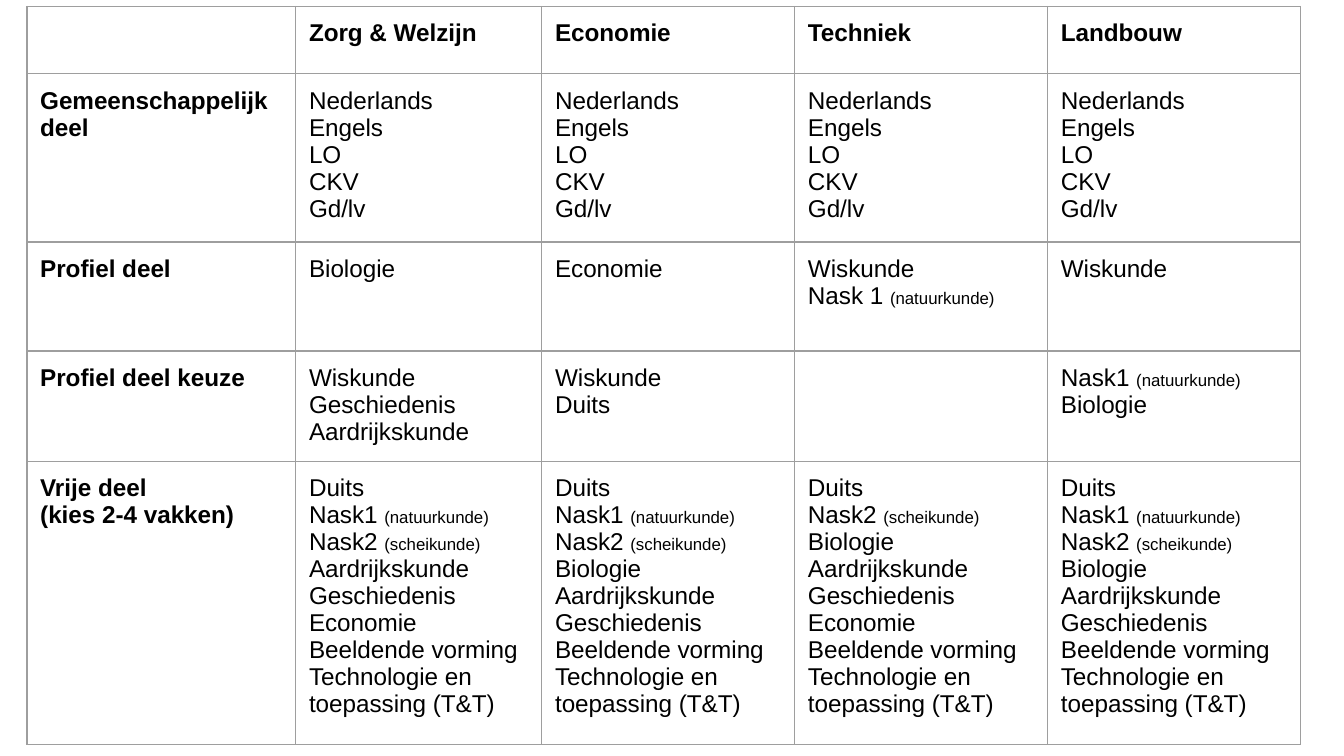
from lxml.etree import SubElement
from pptx import Presentation
from pptx.dml.color import RGBColor
from pptx.oxml.ns import qn
from pptx.util import Cm, Pt

BLACK = RGBColor(0x00, 0x00, 0x00)
WHITE = RGBColor(0xFF, 0xFF, 0xFF)
GREY = RGBColor(0x9E, 0x9E, 0x9E)
FONT = "Arial"

COL_WIDTHS = [5.08, 4.65, 4.78, 4.78, 4.78]
ROW_HEIGHTS = [1.14, 3.18, 2.06, 2.08, 5.36]
INSET = Cm(0.25)

# A cell is a list of paragraphs; a tuple alternates normal and small runs
PHYSICS = ("Nask1 ", "(natuurkunde)")
CHEMISTRY = ("Nask2 ", "(scheikunde)")
COMMON = ["Nederlands", "Engels", "LO", "CKV", "Gd/lv"]
CREATIVE = ["Beeldende vorming", "Technologie en toepassing (T&T)"]
FREE_WITH_BIOLOGY = ["Duits", PHYSICS, CHEMISTRY, "Biologie",
                     "Aardrijkskunde", "Geschiedenis"] + CREATIVE

ROWS = [
    [[], ["Zorg & Welzijn"], ["Economie"], ["Techniek"], ["Landbouw"]],
    [["Gemeenschappelijk deel"]] + [COMMON] * 4,
    [["Profiel deel"], ["Biologie"], ["Economie"],
     ["Wiskunde", ("Nask 1 ", "(natuurkunde)")], ["Wiskunde"]],
    [["Profiel deel keuze"],
     ["Wiskunde", "Geschiedenis", "Aardrijkskunde"],
     ["Wiskunde", "Duits"],
     [],
     [("Nask1 ", "(natuurkunde) ", "Biologie")]],
    [["Vrije deel", "(kies 2-4 vakken)"],
     ["Duits", PHYSICS, CHEMISTRY, "Aardrijkskunde", "Geschiedenis",
      "Economie"] + CREATIVE,
     FREE_WITH_BIOLOGY,
     ["Duits", CHEMISTRY, "Biologie", "Aardrijkskunde", "Geschiedenis",
      "Economie"] + CREATIVE,
     FREE_WITH_BIOLOGY],
]


def set_borders(cell):
    tc_pr = cell._tc.get_or_add_tcPr()
    for side in ("a:lnL", "a:lnR", "a:lnT", "a:lnB"):
        ln = SubElement(tc_pr, qn(side), w=str(Pt(0.75)))
        fill = SubElement(ln, qn("a:solidFill"))
        SubElement(fill, qn("a:srgbClr"), val=str(GREY))


def add_run(p, text, size, bold):
    r = p.add_run()
    r.text = text
    r.font.name = FONT
    r.font.size = Pt(size)
    r.font.bold = bold
    r.font.color.rgb = BLACK


def fill_cell(cell, paragraphs, bold):
    cell.margin_left = cell.margin_right = INSET
    cell.margin_top = cell.margin_bottom = INSET
    set_borders(cell)
    cell.fill.solid()
    cell.fill.fore_color.rgb = WHITE
    tf = cell.text_frame
    for i, content in enumerate(paragraphs):
        p = tf.add_paragraph() if i else tf.paragraphs[0]
        runs = (content,) if isinstance(content, str) else content
        for j, text in enumerate(runs):
            add_run(p, text, 9 if j % 2 else 13, bold)


def add_subject_table(s):
    frame = s.shapes.add_table(len(ROWS), len(COL_WIDTHS), Cm(0.51), Cm(0.12),
                               Cm(sum(COL_WIDTHS)), Cm(sum(ROW_HEIGHTS)))
    table = frame.table
    table.first_row = table.horz_banding = False
    for column, width in zip(table.columns, COL_WIDTHS):
        column.width = Cm(width)
    for row, height in zip(table.rows, ROW_HEIGHTS):
        row.height = Cm(height)
    # Header row and first column are bold
    for i, row in enumerate(ROWS):
        for j, paragraphs in enumerate(row):
            fill_cell(table.cell(i, j), paragraphs, bold=i == 0 or j == 0)


def main():
    prs = Presentation()
    prs.slide_width, prs.slide_height = Cm(25.4), Cm(14.29)
    s = prs.slides.add_slide(prs.slide_layouts[6])
    add_subject_table(s)
    prs.save("out.pptx")


if __name__ == "__main__":
    main()
